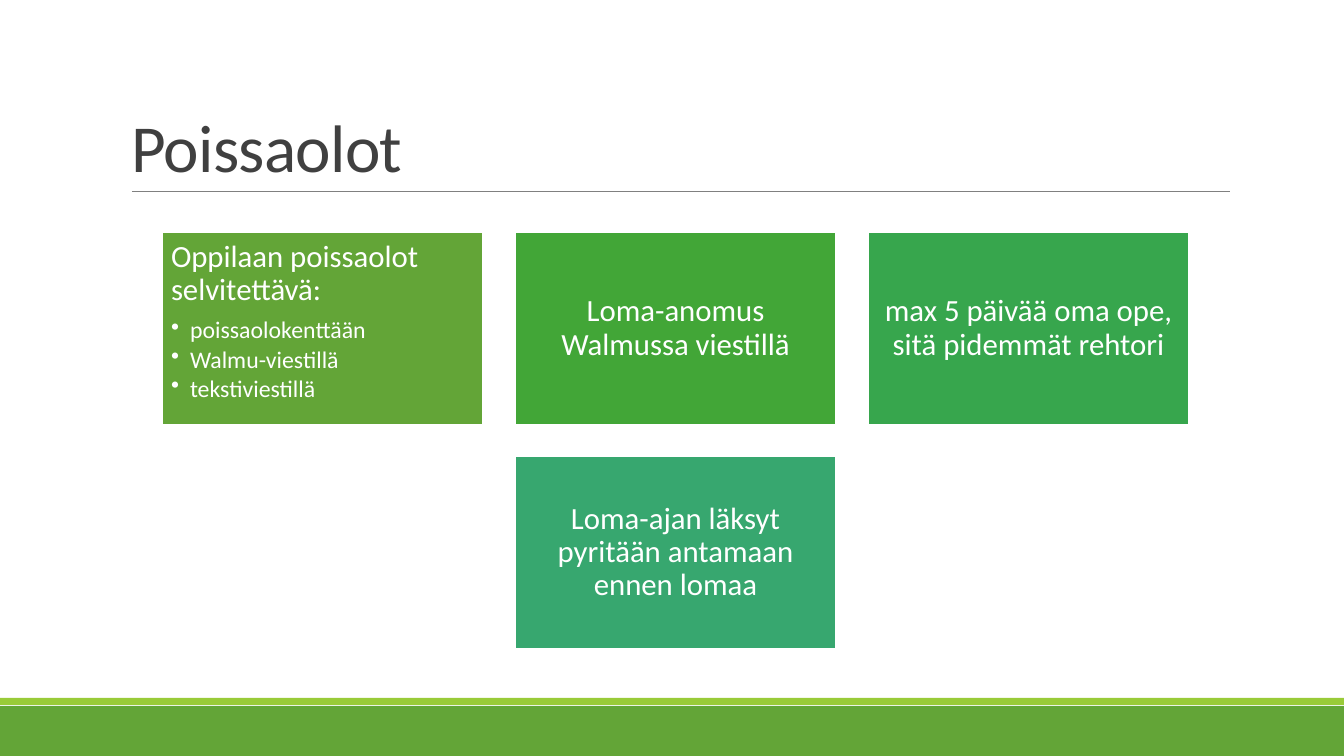
from lxml import etree
from pptx import Presentation
from pptx.dml.color import RGBColor
from pptx.enum.shapes import MSO_CONNECTOR, MSO_SHAPE
from pptx.enum.text import MSO_ANCHOR, MSO_AUTO_SIZE, PP_ALIGN
from pptx.oxml.ns import qn
from pptx.util import Pt

RECTANGLE = MSO_SHAPE.RECTANGLE
STRAIGHT = MSO_CONNECTOR.STRAIGHT
TOP, MIDDLE, BOTTOM = MSO_ANCHOR.TOP, MSO_ANCHOR.MIDDLE, MSO_ANCHOR.BOTTOM
LEFT, CENTER = PP_ALIGN.LEFT, PP_ALIGN.CENTER
NO_AUTOFIT = MSO_AUTO_SIZE.NONE
TITLE_ONLY = 5
SLIDE_WIDTH, SLIDE_HEIGHT = 1344, 756
CARD_WIDTH, CARD_HEIGHT = 321, 193
CARD_LEFT, CARD_TOP = 162, 232
COLUMN_STEP, ROW_STEP = 353, 224

CARDS = [
    (0, 0, "63A537", "Oppilaan poissaolot selvitettävä:",
     ["poissaolokenttään", "Walmu-viestillä", "tekstiviestillä"]),
    (1, 0, "42A637", "Loma-anomus Walmussa viestillä", []),
    (2, 0, "37A64D", "max 5 päivää oma ope, sitä pidemmät rehtori", []),
    (1, 1, "37A76F", "Loma-ajan läksyt pyritään antamaan ennen lomaa", []),
]


def px(count):
    return round(count * 914400 / 100.8)


def color(value):
    return RGBColor.from_string(value)


class SlideBuilder:
    font = "Calibri"
    white = "FFFFFF"
    heading_size = 22
    bullet_size = 17
    card_inset = 9
    bullet_indent = 19

    def __init__(self, slide):
        self.slide = slide

    def style(self, paragraph, size, tint, spacing, after=0):
        paragraph.line_spacing = spacing
        paragraph.space_before = Pt(0)
        paragraph.space_after = Pt(after)
        paragraph.font.name = self.font
        paragraph.font.size = Pt(size)
        paragraph.font.color.rgb = color(tint)

    def title(self, text, left, top, width, height):
        title = self.slide.shapes.title
        title.left, title.top = px(left), px(top)
        title.width, title.height = px(width), px(height)
        frame = title.text_frame
        frame.auto_size = NO_AUTOFIT
        frame.word_wrap = True
        frame.vertical_anchor = BOTTOM
        frame.text = text
        heading = frame.paragraphs[0]
        heading.alignment = LEFT
        self.style(heading, 48, "404040", 0.85)
        heading.runs[0].font.size = Pt(48)
        heading.runs[0]._r.get_or_add_rPr().set("spc", "-50")

    def rectangle(self, left, top, width, height, fill, outline=None):
        block = self.slide.shapes.add_shape(
            RECTANGLE, px(left), px(top), px(width), px(height))
        block.shadow.inherit = False
        block.fill.solid()
        block.fill.fore_color.rgb = color(fill)
        if outline:
            block.line.color.rgb = color(outline)
            block.line.width = Pt(1.25)
        else:
            block.line.fill.background()
        return block

    def rule(self, left, right, y, tint):
        rule = self.slide.shapes.add_connector(
            STRAIGHT, px(left), px(y), px(right), px(y))
        rule.line.color.rgb = color(tint)
        rule.line.width = Pt(0.5)
        etree.SubElement(rule._element.spPr, qn("a:effectLst"))

    def bullet(self, frame, text):
        item = frame.add_paragraph()
        item.text = text
        item.level = 1
        item.alignment = LEFT
        properties = item._p.get_or_add_pPr()
        properties.set("marL", str(px(self.bullet_indent)))
        properties.set("indent", str(-px(self.bullet_indent)))
        etree.SubElement(properties, qn("a:buChar"), char="•")
        self.style(item, self.bullet_size, self.white, 0.9, 2.55)

    def card(self, column, row, fill, heading, bullets):
        card = self.rectangle(
            CARD_LEFT + column * COLUMN_STEP, CARD_TOP + row * ROW_STEP,
            CARD_WIDTH, CARD_HEIGHT, fill, self.white)
        frame = card.text_frame
        frame.word_wrap = True
        frame.margin_left = frame.margin_right = px(self.card_inset)
        frame.margin_top = frame.margin_bottom = px(self.card_inset)
        frame.vertical_anchor = TOP if bullets else MIDDLE
        frame.text = heading
        lead = frame.paragraphs[0]
        lead.alignment = LEFT if bullets else CENTER
        self.style(lead, self.heading_size, self.white, 0.9, 7.7)
        for text in bullets:
            self.bullet(frame, text)


def main():
    deck = Presentation()
    deck.slide_width, deck.slide_height = px(SLIDE_WIDTH), px(SLIDE_HEIGHT)
    builder = SlideBuilder(deck.slides.add_slide(deck.slide_layouts[TITLE_ONLY]))
    builder.rectangle(0, 706, SLIDE_WIDTH, 50, "63A537")
    builder.rectangle(0, 698, SLIDE_WIDTH, 7, "99CB38")
    builder.rule(132, 1230, 191, "808080")
    builder.title("Poissaolot", 121, 31, 1109, 160)
    for card in CARDS:
        builder.card(*card)
    deck.save("out.pptx")


if __name__ == "__main__":
    main()
